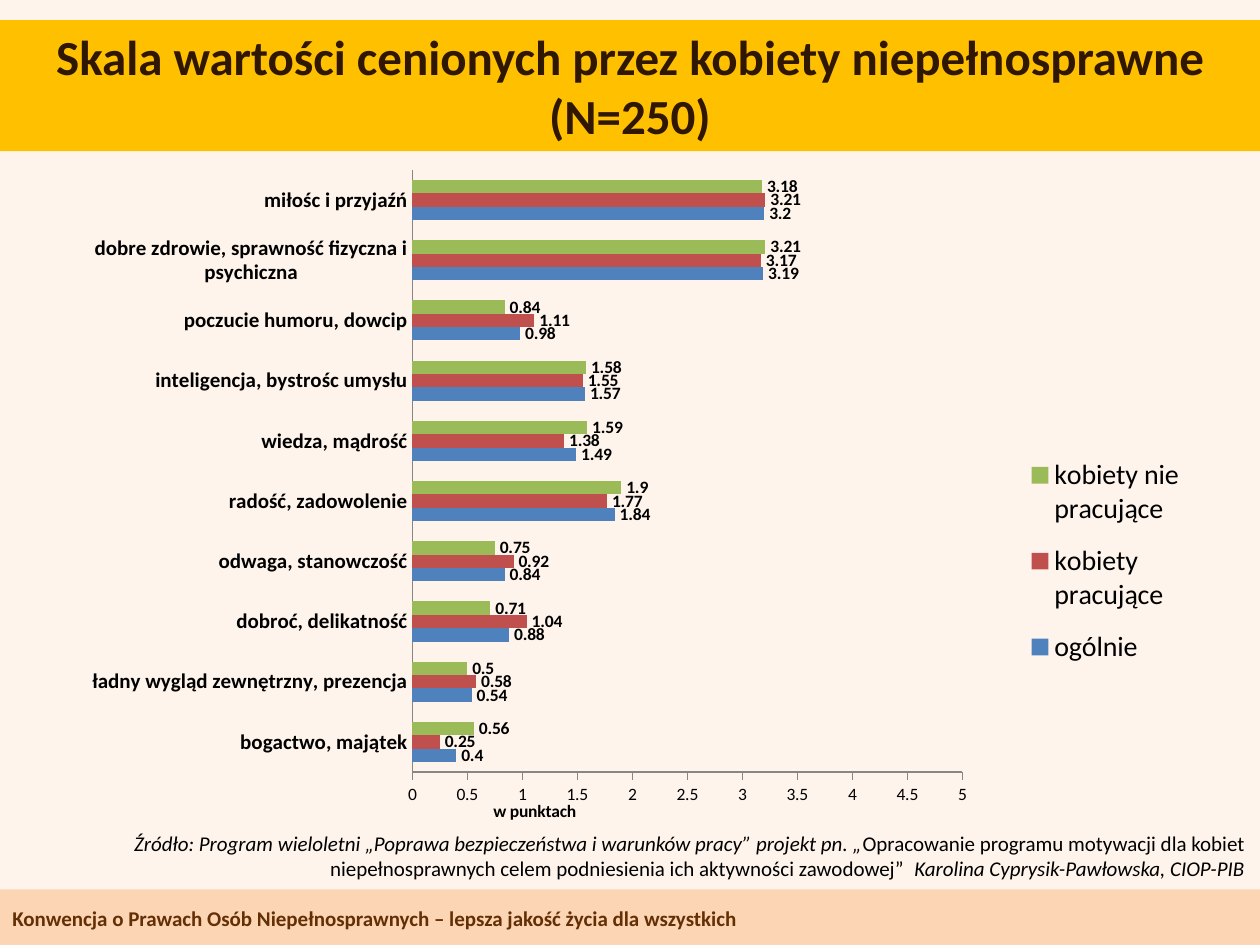
import pptx
import pptx.chart.data
import pptx.dml.color
import pptx.enum.chart
import pptx.enum.shapes
import pptx.enum.text
import pptx.oxml
import pptx.oxml.ns
import pptx.util
from pptx.util import Inches

TITLE = "Skala wartości cenionych przez kobiety niepełnosprawne (N=250)"
FOOTER = "Konwencja o Prawach Osób Niepełnosprawnych – lepsza jakość życia dla wszystkich"
SOURCE = [
    ("Źródło: Program wieloletni „Poprawa bezpieczeństwa i warunków pracy” projekt pn. „", True),
    ("Opracowanie programu motywacji dla kobiet niepełnosprawnych celem podniesienia "
     "ich aktywności zawodowej”", False),
    ("  Karolina Cyprysik-Pawłowska, CIOP-PIB", True),
]
AXIS_TITLE = "w punktach"
SERIES = [("ogólnie", "blue"), ("kobiety pracujące", "red"), ("kobiety nie pracujące", "green")]
VALUES = [
    ("bogactwo, majątek", 0.4, 0.25, 0.56),
    ("ładny wygląd zewnętrzny, prezencja", 0.54, 0.58, 0.5),
    ("dobroć, delikatność", 0.88, 1.04, 0.71),
    ("odwaga, stanowczość", 0.84, 0.92, 0.75),
    ("radość, zadowolenie", 1.84, 1.77, 1.9),
    ("wiedza, mądrość", 1.49, 1.38, 1.59),
    ("inteligencja, bystrośc umysłu", 1.57, 1.55, 1.58),
    ("poczucie humoru, dowcip", 0.98, 1.11, 0.84),
    ("dobre zdrowie, sprawność fizyczna i psychiczna", 3.19, 3.17, 3.21),
    ("miłośc i przyjaźń", 3.2, 3.21, 3.18),
]
THEME = {
    "font": "Calibri",
    "colors": {
        "background": "FEF4EC", "band": "FCD5B5", "title_band": "FFC000",
        "title": "301702", "footer": "642F04", "text": "000000", "axis": "868686",
        "blue": "4F81BD", "red": "C0504D", "green": "9BBB59",
    },
    "sizes": {"title": 28, "legend": 16, "body": 12, "chart": 10},
}


def color(name):
    """Return a theme colour."""
    return pptx.dml.color.RGBColor.from_string(THEME["colors"][name])


def format_font(font, size, color_name="text", bold=False, italic=False):
    """Apply the theme font, size and colour."""
    font.name = THEME["font"]
    font.size = pptx.util.Pt(THEME["sizes"][size])
    font.color.rgb = color(color_name)
    font.bold = bold
    font.italic = italic


def place(shape, left, top, width, height):
    """Set the position and size of a shape in inches."""
    shape.left, shape.top = Inches(left), Inches(top)
    shape.width, shape.height = Inches(width), Inches(height)


def paint(fill, color_name):
    """Make a fill solid in a theme colour."""
    fill.solid()
    fill.fore_color.rgb = color(color_name)


def prepare_frame(shape, alignment):
    """Wrap and centre a text frame vertically and return its first paragraph."""
    frame = shape.text_frame
    frame.word_wrap = True
    frame.auto_size = pptx.enum.text.MSO_AUTO_SIZE.NONE
    frame.vertical_anchor = pptx.enum.text.MSO_ANCHOR.MIDDLE
    paragraph = frame.paragraphs[0]
    paragraph.alignment = alignment
    return paragraph


def add_text(slide, box, runs, alignment, color_name="text", bold=False):
    """Add a text box made of (text, italic) runs."""
    shape = slide.shapes.add_textbox(*map(Inches, box))
    paragraph = prepare_frame(shape, alignment)
    for text, italic in runs:
        run = paragraph.add_run()
        run.text = text
        format_font(run.font, "body", color_name, bold, italic)


def set_layout(element, index, inner=False, **parts):
    """Give a chart element a manual layout in fractions of the chart."""
    for old in element.findall(pptx.oxml.ns.qn("c:layout")):
        element.remove(old)
    target = '<c:layoutTarget val="inner"/>' if inner else ""
    modes = "".join(f'<c:{key}Mode val="edge"/>' for key in ("x", "y"))
    sizes = "".join(f'<c:{key} val="{value}"/>' for key, value in parts.items())
    element.insert(index, pptx.oxml.parse_xml(
        f'<c:layout {pptx.oxml.ns.nsdecls("c")}><c:manualLayout>'
        f"{target}{modes}{sizes}</c:manualLayout></c:layout>"))


def add_values_chart(slide):
    """Add the clustered bar chart of valued qualities."""
    data = pptx.chart.data.CategoryChartData()
    categories, *columns = zip(*VALUES)
    data.categories = categories
    for (name, _), column in zip(SERIES, columns):
        data.add_series(name, column)
    enums = pptx.enum.chart
    chart = slide.shapes.add_chart(
        enums.XL_CHART_TYPE.BAR_CLUSTERED,
        *map(Inches, (0.39, 1.2, 9.21, 5.36)), data).chart
    format_font(chart.font, "chart")
    chart.has_title = False

    plot = chart.plots[0]
    plot.gap_width = 150
    plot.overlap = 0
    plot.vary_by_categories = False
    for series, (_, color_name) in zip(plot.series, SERIES):
        paint(series.format.fill, color_name)
        labels = series.data_labels
        labels.show_value = True
        labels.position = enums.XL_LABEL_POSITION.OUTSIDE_END
        format_font(labels.font, "chart", bold=True)

    category_axis, value_axis = chart.category_axis, chart.value_axis
    category_axis.major_tick_mark = enums.XL_TICK_MARK.NONE
    format_font(category_axis.tick_labels.font, "body", bold=True)
    value_axis.major_tick_mark = enums.XL_TICK_MARK.OUTSIDE
    value_axis.minimum_scale, value_axis.maximum_scale = 0, 5
    value_axis.major_unit = 0.5
    value_axis.has_major_gridlines = False
    format_font(value_axis.tick_labels.font, "chart")
    for axis in (category_axis, value_axis):
        axis.format.line.color.rgb = color("axis")
        axis.format.line.width = pptx.util.Pt(0.75)

    axis_title = value_axis.axis_title
    axis_title.text_frame.text = AXIS_TITLE
    format_font(axis_title.text_frame.paragraphs[0].runs[0].font, "chart", bold=True)

    chart.has_legend = True
    legend = chart.legend
    legend.position = enums.XL_LEGEND_POSITION.RIGHT
    legend.include_in_layout = False
    format_font(legend.font, "legend")

    plot_area = chart.element.find(".//" + pptx.oxml.ns.qn("c:plotArea"))
    title_element = plot_area.find(".//" + pptx.oxml.ns.qn("c:title"))
    legend_element = chart.element.find(".//" + pptx.oxml.ns.qn("c:legend"))
    set_layout(plot_area, 0, inner=True, x=0.313, y=0.028, w=0.474, h=0.896)
    set_layout(title_element, 1, x=0.38, y=0.96)
    set_layout(legend_element, 1, x=0.83, y=0.43, w=0.16, h=0.36)


def main():
    """Build the slide on values appreciated by disabled women."""
    presentation = pptx.Presentation()
    presentation.slide_width, presentation.slide_height = Inches(10), Inches(7.5)
    slide = presentation.slides.add_slide(presentation.slide_layouts[5])
    paint(slide.background.fill, "background")
    align = pptx.enum.text.PP_ALIGN

    band = slide.shapes.add_shape(
        pptx.enum.shapes.MSO_SHAPE.RECTANGLE, *map(Inches, (0, 7.06, 10, 0.44)))
    band.shadow.inherit = False
    paint(band.fill, "band")
    band.line.fill.background()
    add_text(slide, (0, 7.13, 10, 0.31), [(FOOTER, False)], align.LEFT, "footer", bold=True)

    add_values_chart(slide)

    title = slide.shapes.title
    place(title, 0, 0.16, 10, 1.04)
    paint(title.fill, "title_band")
    paragraph = prepare_frame(title, align.CENTER)
    paragraph.text = TITLE
    format_font(paragraph.runs[0].font, "title", "title", bold=True)

    add_text(slide, (0, 6.54, 9.98, 0.5), SOURCE, align.RIGHT)
    presentation.save("out.pptx")


if __name__ == "__main__":
    main()
